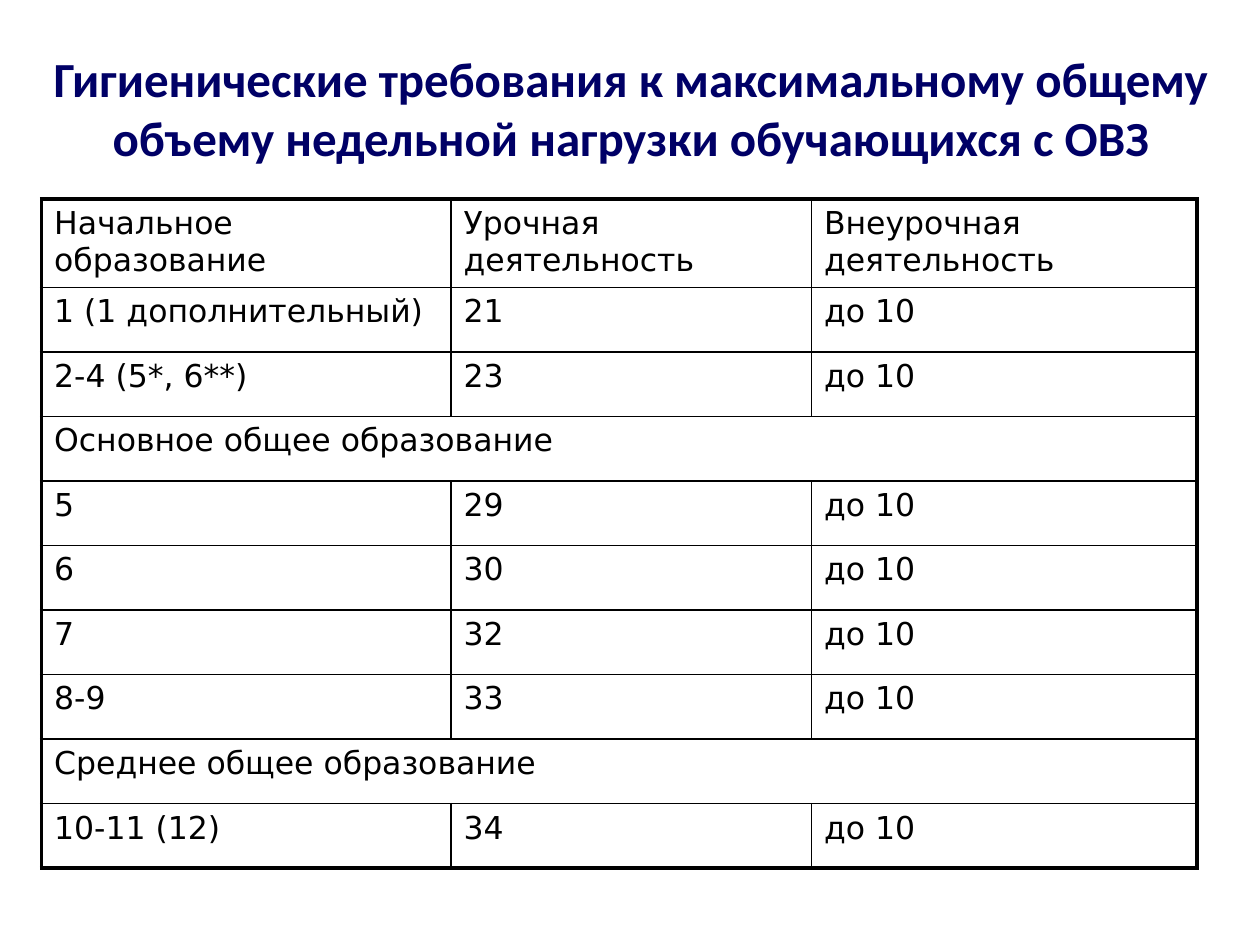
from lxml import etree
from pptx import Presentation
from pptx import util as u
from pptx.dml.color import RGBColor
from pptx.enum import text as t
from pptx.oxml.ns import qn

HUE = {"ink": "000000", "navy": "000066", "paper": "FFFFFF"}
WIDE, HIGH = 10, 7.5
HEAD = (0.17, 0.3, 9.67, 1.11)
GRID = (0.33, 1.58, 9.17, 5.31)
COLS = (3.25, 2.86, 3.06)
TOP = 0.7
THIN, BOLD = 1, 2.25
EXTRA = "до 10"
ROWS = [
    ("Начальное образование", "Урочная деятельность", "Внеурочная деятельность"),
    ("1 (1 дополнительный)", "21", EXTRA),
    ("2-4 (5*, 6**)", "23", EXTRA),
    ("Основное общее образование",),
    ("5", "29", EXTRA),
    ("6", "30", EXTRA),
    ("7", "32", EXTRA),
    ("8-9", "33", EXTRA),
    ("Среднее общее образование",),
    ("10-11 (12)", "34", EXTRA),
]


def write(frame, words, size=18, font="DejaVu Sans", hue="ink", bold=False,
          align=t.PP_ALIGN.LEFT):
    """Put one formatted paragraph into a text frame."""
    frame.word_wrap = True
    para = frame.paragraphs[0]
    para.alignment = align
    run = para.add_run()
    run.text = words
    run.font.size = u.Pt(size)
    run.font.name = font
    run.font.bold = bold
    run.font.color.rgb = RGBColor.from_string(HUE[hue])


def edge(cell, sides):
    """Draw the cell borders from a dict of side to width in points."""
    props = cell._tc.get_or_add_tcPr()
    for spot, (side, width) in enumerate(sides.items()):
        line = etree.Element(qn(f"a:ln{side}"), w=str(u.Pt(width)))
        fill = etree.SubElement(line, qn("a:solidFill"))
        etree.SubElement(fill, qn("a:srgbClr"), val=HUE["ink"])
        props.insert(spot, line)


def title(slide, box):
    """Place the centred heading in its box."""
    frame = slide.shapes.add_textbox(*map(u.Inches, box)).text_frame
    frame.vertical_anchor = t.MSO_ANCHOR.MIDDLE
    write(frame, "Гигиенические требования к максимальному общему объему "
          "недельной нагрузки обучающихся с ОВЗ", size=28, font="Calibri",
          hue="navy", bold=True, align=t.PP_ALIGN.CENTER)


def loads(slide, box):
    """Place the table of weekly loads, with a bold outer frame."""
    last, end = len(ROWS) - 1, len(COLS) - 1
    table = slide.shapes.add_table(
        len(ROWS), len(COLS), *map(u.Inches, box)).table
    table.first_row = table.horz_banding = False
    for col, width in zip(table.columns, COLS):
        col.width = u.Inches(box[2] * width / sum(COLS))
    for i, (row, words) in enumerate(zip(table.rows, ROWS)):
        row.height = u.Inches(TOP if i == 0 else (box[3] - TOP) / last)
        for j, cell in enumerate(row.cells):
            cell.fill.solid()
            cell.fill.fore_color.rgb = RGBColor.from_string(HUE["paper"])
            right = j == end or len(words) == 1
            edge(cell, {"L": THIN if j else BOLD, "R": BOLD if right else THIN,
                        "T": THIN if i else BOLD, "B": BOLD if i == last else THIN})
            if j < len(words):
                write(cell.text_frame, words[j])
        if len(words) == 1:
            table.cell(i, 0).merge(table.cell(i, end))


def main():
    """Build and save the slide."""
    deck = Presentation()
    deck.slide_width, deck.slide_height = u.Inches(WIDE), u.Inches(HIGH)
    slide = deck.slides.add_slide(deck.slide_layouts[6])
    loads(slide, GRID)
    title(slide, HEAD)
    deck.save("out.pptx")


if __name__ == "__main__":
    main()
